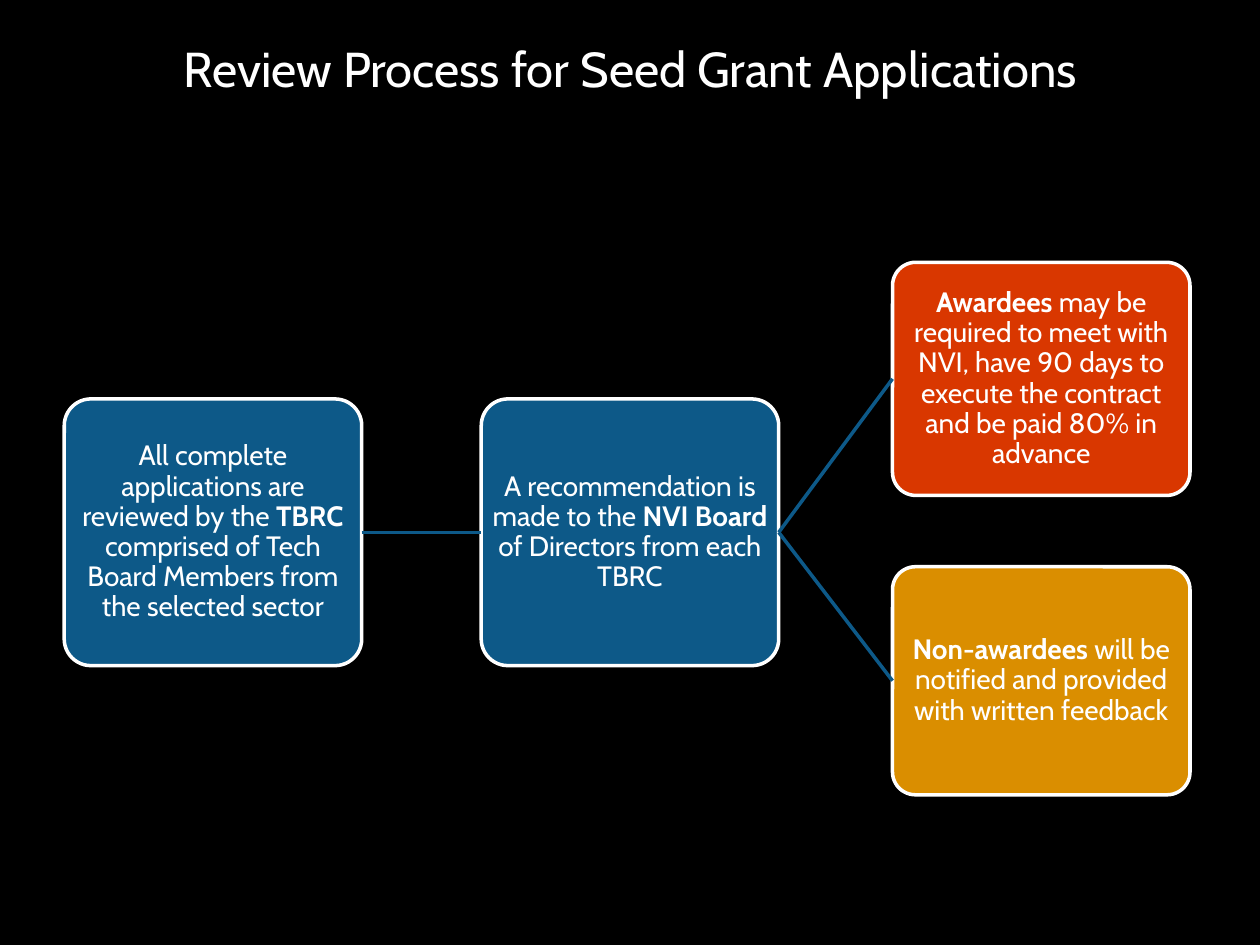
from dataclasses import dataclass

from lxml import etree
from pptx import Presentation
from pptx.dml.color import RGBColor
from pptx.enum.shapes import MSO_CONNECTOR, MSO_SHAPE
from pptx.enum.text import MSO_ANCHOR, MSO_AUTO_SIZE, PP_ALIGN
from pptx.oxml.ns import qn
from pptx.util import Pt

ROUNDED = MSO_SHAPE.ROUNDED_RECTANGLE
STRAIGHT = MSO_CONNECTOR.STRAIGHT
MIDDLE = MSO_ANCHOR.MIDDLE
CENTER = PP_ALIGN.CENTER
NO_AUTOFIT = MSO_AUTO_SIZE.NONE
LEFT_SITE, RIGHT_SITE = 1, 3
TITLE_ONLY = 5


@dataclass(frozen=True)
class Theme:
    font: str = "Cabin"
    title_size: int = 28
    body_size: int = 16
    line_width: int = 2
    background: RGBColor = RGBColor(0x00, 0x00, 0x00)
    text: RGBColor = RGBColor(0xFF, 0xFF, 0xFF)
    step: RGBColor = RGBColor(0x0D, 0x59, 0x88)
    awarded: RGBColor = RGBColor(0xD9, 0x37, 0x00)
    declined: RGBColor = RGBColor(0xDA, 0x8E, 0x00)


class SlideBuilder:
    """Draws styled elements on one slide; all lengths are in points."""

    def __init__(self, slide, theme):
        self.s = slide
        self.theme = theme
        fill = slide.background.fill
        fill.solid()
        fill.fore_color.rgb = theme.background

    def set_frame(self, tf, inset):
        tf.word_wrap = True
        tf.auto_size = NO_AUTOFIT
        tf.vertical_anchor = MIDDLE
        tf.margin_left = tf.margin_right = Pt(inset)
        tf.margin_top = tf.margin_bottom = Pt(inset)
        tf.paragraphs[0].alignment = CENTER

    def set_font(self, r, size, bold=False):
        r.font.name = self.theme.font
        r.font.size = Pt(size)
        r.font.bold = bold
        r.font.color.rgb = self.theme.text

    def title(self, text, left, top, width, height):
        sp = self.s.shapes.title
        sp.left, sp.top, sp.width, sp.height = map(Pt, (left, top, width, height))
        sp.text_frame.text = text
        self.set_frame(sp.text_frame, 0)
        self.set_font(sp.text_frame.paragraphs[0].runs[0], self.theme.title_size)

    def box(self, parts, left, middle, width, height, color):
        """Add a box centred on the height middle; parts are (text, bold) pairs."""
        sp = self.s.shapes.add_shape(
            ROUNDED, Pt(left), Pt(middle - height / 2), Pt(width), Pt(height))
        sp.adjustments[0] = 0.1
        sp.shadow.inherit = False
        sp.fill.solid()
        sp.fill.fore_color.rgb = color
        sp.line.color.rgb = self.theme.text
        sp.line.width = Pt(self.theme.line_width)
        self.set_frame(sp.text_frame, 1)
        p = sp.text_frame.paragraphs[0]
        p.line_spacing = 0.9
        for text, bold in parts:
            r = p.add_run()
            r.text = text
            self.set_font(r, self.theme.body_size, bold)
        return sp

    def connect(self, source, target):
        line = self.s.shapes.add_connector(STRAIGHT, 0, 0, 0, 0)
        line.begin_connect(source, RIGHT_SITE)
        line.end_connect(target, LEFT_SITE)
        line.line.color.rgb = self.theme.step
        line.line.width = Pt(self.theme.line_width)
        etree.SubElement(line._element.spPr, qn("a:effectLst"))


def main():
    prs = Presentation()
    prs.slide_width, prs.slide_height = Pt(720), Pt(540)
    theme = Theme()
    slide = SlideBuilder(prs.slides.add_slide(prs.slide_layouts[TITLE_ONLY]), theme)
    slide.title("Review Process for Seed Grant Applications", 14, 14.4, 692, 49)

    box_width, main_row, step_height = 170, 304.2, 152.4
    review = slide.box(
        [("All complete applications are reviewed by the ", False),
         ("TBRC", True),
         (" comprised of Tech Board Members from the selected sector", False)],
        36.7, main_row, box_width, step_height, theme.step)
    recommend = slide.box(
        [("A recommendation is made to the ", False),
         ("NVI Board ", True),
         ("of Directors from each TBRC", False)],
        275, main_row, box_width, step_height, theme.step)

    outcomes = [
        ("Awardees",
         " may be required to meet with NVI, have 90 days to execute"
         " the contract and be paid 80% in advance",
         216.5, 133.2, theme.awarded),
        ("Non-awardees",
         " will be notified and provided with written feedback",
         389, 130.3, theme.declined),
    ]
    slide.connect(review, recommend)
    for who, result, middle, height, color in outcomes:
        outcome = slide.box([(who, True), (result, False)],
                            510, middle, box_width, height, color)
        slide.connect(recommend, outcome)

    prs.save("out.pptx")


if __name__ == "__main__":
    main()
